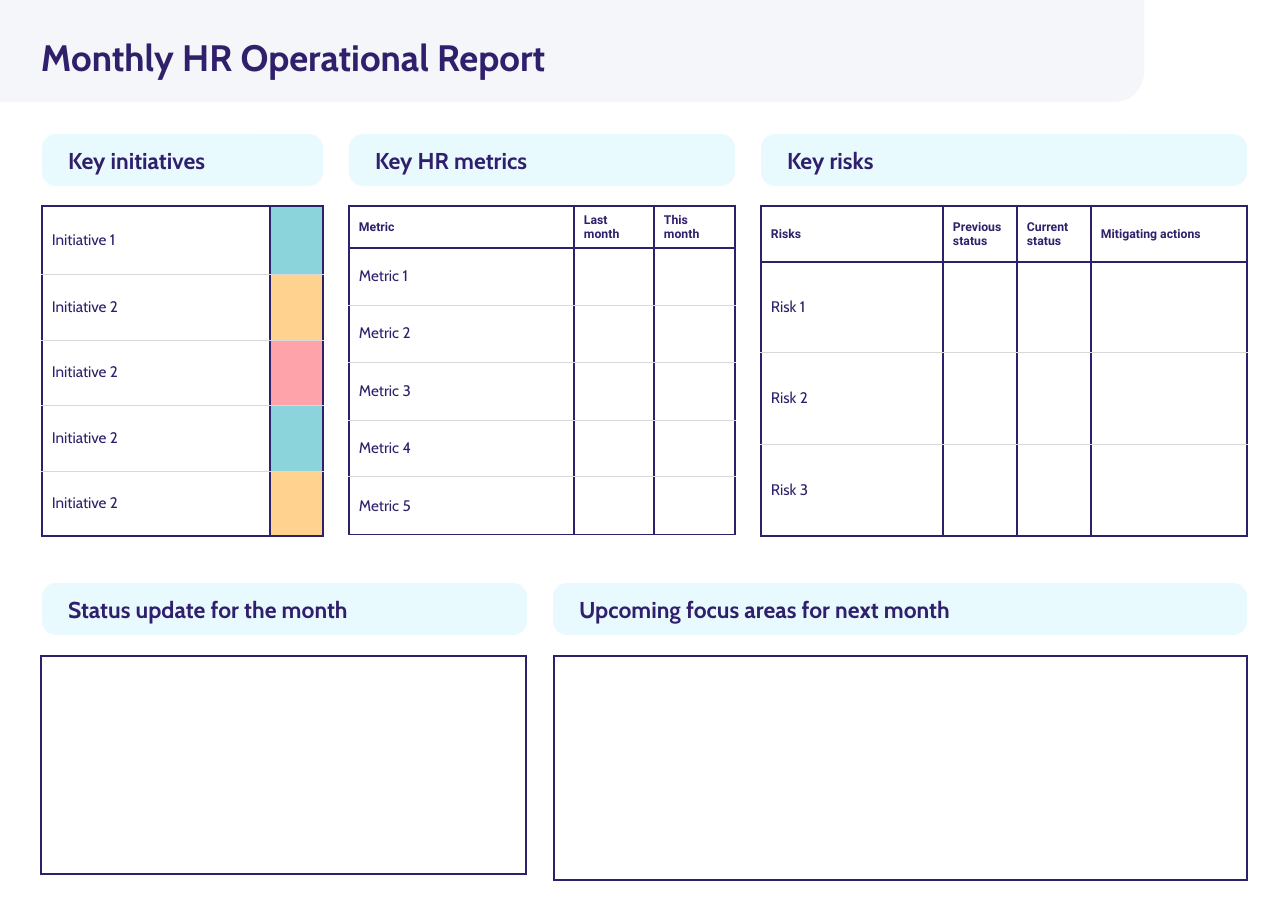
from lxml import etree
from pptx import Presentation
from pptx import util as u
from pptx.dml import color
from pptx.enum import shapes, text
from pptx.oxml import ns

PX = 8298
NAVY, GREY = "30206B", "D9D9D9"
TEAL, AMBER, PINK = "8BD4DB", "FFD38F", "FFA3AA"


def hue(code):
    return color.RGBColor.from_string(code)


def write(frame, words, size=10, font="Cabin", bold=False, spacing=None):
    frame.word_wrap = True
    line = frame.paragraphs[0]
    line.alignment = text.PP_ALIGN.LEFT
    line.line_spacing = spacing
    run = line.add_run()
    run.text = words
    run.font.size = u.Pt(size)
    run.font.name = font
    run.font.bold = bold
    run.font.color.rgb = hue(NAVY)


prs = Presentation()
prs.slide_width, prs.slide_height = 1288 * PX, 911 * PX
slide = prs.slides.add_slide(prs.slide_layouts[5])

banner = slide.shapes.add_shape(
    shapes.MSO_SHAPE.ROUND_1_RECTANGLE, 0, 0, 1144 * PX, 102 * PX)
banner.adjustments[0] = 0.29
banner.shadow.inherit = False
banner.fill.solid()
banner.fill.fore_color.rgb = hue("F4F6FA")
banner.line.fill.background()
banner._element.spPr.xfrm.set("flipV", "1")

headline = slide.shapes.title
headline.left, headline.top = 41 * PX, 40 * PX
headline.width, headline.height = 1102 * PX, 71 * PX
title_frame = headline.text_frame
title_frame.margin_left = title_frame.margin_right = 0
title_frame.margin_top = title_frame.margin_bottom = 0
title_frame.vertical_anchor = text.MSO_ANCHOR.TOP
title_frame.auto_size = text.MSO_AUTO_SIZE.NONE
write(title_frame, "Monthly HR Operational Report", size=24, bold=True, spacing=0.9)
slide.shapes._spTree.append(headline._element)

initiatives = [["Initiative 1", ""]] + [["Initiative 2", ""]] * 4
metrics = [["Metric", "Last month", "This month"]]
metrics += [[f"Metric {n}", "", ""] for n in range(1, 6)]
risks = [["Risks", "Previous status", "Current status", "Mitigating actions"]]
risks += [[f"Risk {n}", "", "", ""] for n in range(1, 4)]
statuses = [TEAL, AMBER, PINK, TEAL, AMBER]

grids = [
    (42, 206, [228, 53], [68, 66, 65, 66, 65], initiatives, False),
    (349, 206, [225, 80, 81], [42, 57, 57, 58, 57, 58], metrics, True),
    (761, 206, [182, 74, 74, 156], [56, 90, 92, 92], risks, True),
    (41, 656, [485], [218], [[""]], False),
    (554, 656, [693], [224], [[""]], False),
]
for left, top, widths, heights, entries, has_header in grids:
    grid = slide.shapes.add_table(
        len(heights), len(widths), left * PX, top * PX,
        sum(widths) * PX, sum(heights) * PX).table
    grid.first_row = grid.horz_banding = False
    for column, width in zip(grid.columns, widths):
        column.width = width * PX
    for r, height in enumerate(heights):
        grid.rows[r].height = height * PX
        heading = has_header and r == 0
        dark_top = r == 0 or (has_header and r == 1)
        dark_bottom = heading or r == len(heights) - 1
        for c, entry in enumerate(entries[r]):
            cell = grid.cell(r, c)
            cell.margin_left = cell.margin_right = 10 * PX
            cell.margin_top = cell.margin_bottom = 4 * PX
            cell.vertical_anchor = text.MSO_ANCHOR.MIDDLE
            if heading:
                write(cell.text_frame, entry, size=8, font="Roboto", bold=True)
            elif entry:
                write(cell.text_frame, entry)
            edges = {"lnL": True, "lnR": True, "lnT": dark_top, "lnB": dark_bottom}
            for edge, dark in edges.items():
                border = etree.SubElement(
                    cell._tc.get_or_add_tcPr(), ns.qn(f"a:{edge}"),
                    w=str(u.Pt(1 if dark else 0.5)))
                ink = etree.SubElement(border, ns.qn("a:solidFill"))
                etree.SubElement(ink, ns.qn("a:srgbClr"), val=NAVY if dark else GREY)
            if entries is initiatives and c == 1:
                cell.fill.solid()
                cell.fill.fore_color.rgb = hue(statuses[r])
            else:
                cell.fill.background()

sections = [
    ("Key initiatives", 42, 134, 281),
    ("Key HR metrics", 349, 134, 386),
    ("Key risks", 761, 134, 486),
    ("Status update for the month", 42, 583, 485),
    ("Upcoming focus areas for next month", 553, 583, 694),
]
for name, left, top, width in sections:
    label = slide.shapes.add_shape(
        shapes.MSO_SHAPE.ROUNDED_RECTANGLE,
        left * PX, top * PX, width * PX, 52 * PX)
    label.adjustments[0] = 0.27
    label.shadow.inherit = False
    label.fill.solid()
    label.fill.fore_color.rgb = hue("E9FAFF")
    label.line.fill.background()
    label.text_frame.margin_left = label.text_frame.margin_right = 22 * PX
    label.text_frame.vertical_anchor = text.MSO_ANCHOR.MIDDLE
    write(label.text_frame, name, size=15, bold=True)

prs.save("out.pptx")
